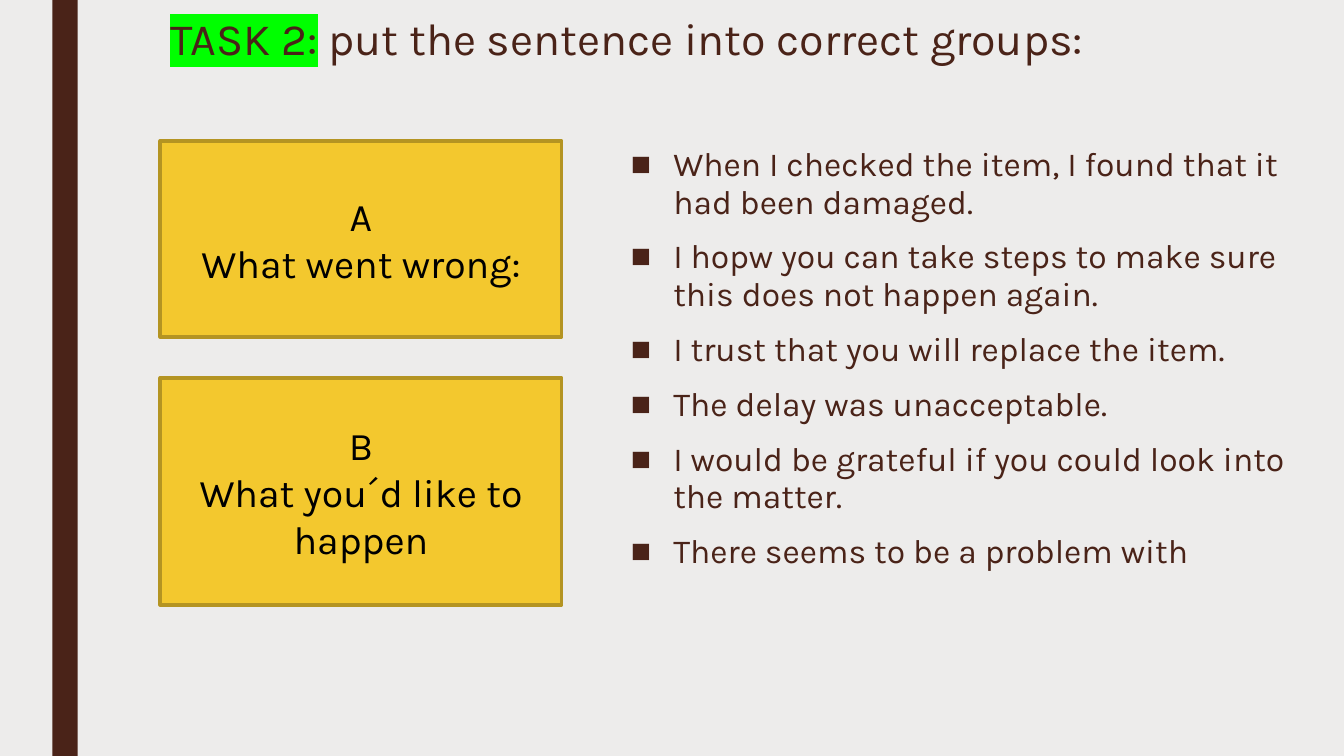
from lxml.etree import SubElement
from pptx import Presentation
from pptx.dml.color import RGBColor
from pptx.enum.shapes import MSO_SHAPE
from pptx.enum.text import MSO_ANCHOR, PP_ALIGN
from pptx.oxml.ns import qn
from pptx.util import Inches, Pt

WIDE, HIGH = 13.33, 7.5
LEFT, TOP = 1.59 / WIDE, 1.4 / HIGH
BOX = 3.98 / WIDE

GROUPS = [
    (TOP, 1.94 / HIGH, ["A", "What went wrong:"]),
    (3.75 / HIGH, 2.25 / HIGH, ["B", "What you´d like to happen"]),
]
LINES = [
    "When I checked the item, I found that it had been damaged.",
    "I hopw you can take steps to make sure this does not happen again.",
    "I trust that you will replace the item.",
    "The delay was unacceptable.",
    "I would be grateful if you could look into the matter.",
    "There seems to be a problem with",
]


def tint(code):
    return RGBColor.from_string(code)


def write(para, text, size=24, color="4A2318", mark=None):
    """Add a run; mark is its highlight colour."""
    run = para.add_run()
    run.text = text
    font = run.font
    font.size, font.name = Pt(size), "Karla"
    font.color.rgb = tint(color)
    if mark:
        props = font._element
        light = SubElement(props, qn("a:highlight"))
        SubElement(light, qn("a:srgbClr"), val=mark)
        props.find(qn("a:solidFill")).addnext(light)


class Deck:
    """Places elements by shares of the slide's width and height."""

    dark, gold, edge = "4A2318", "F3C82E", "B49422"

    def __init__(self):
        self.show = Presentation()
        self.show.slide_width = Inches(WIDE)
        self.show.slide_height = Inches(HIGH)
        self.slide = self.show.slides.add_slide(self.show.slide_layouts[6])
        back = self.slide.background.fill
        back.solid()
        back.fore_color.rgb = tint("EDECEB")

    def place(self, x, y, w, h):
        return (Inches(x * WIDE), Inches(y * HIGH),
                Inches(w * WIDE), Inches(h * HIGH))

    def rect(self, x, y, w, h, fill, edge=None):
        shape = self.slide.shapes.add_shape(
            MSO_SHAPE.RECTANGLE, *self.place(x, y, w, h))
        shape.shadow.inherit = False
        shape.fill.solid()
        shape.fill.fore_color.rgb = tint(fill)
        if edge:
            shape.line.color.rgb = tint(edge)
            shape.line.width = Pt(2.75)
        else:
            shape.line.fill.background()
        return shape

    def paras(self, frame, count):
        """Yield count paragraphs of a wrapped frame."""
        frame.word_wrap = True
        for i in range(count):
            yield frame.add_paragraph() if i else frame.paragraphs[0]

    def text(self, x, y, w, h):
        return self.slide.shapes.add_textbox(
            *self.place(x, y, w, h)).text_frame

    def title(self, head, rest):
        frame = self.text(LEFT, 0.12 / HIGH, 10.5 / WIDE, 0.97 / HIGH)
        for para in self.paras(frame, 1):
            para.line_spacing = 0.89
            write(para, head, size=32, mark="00FF00")
            write(para, rest, size=32)

    def group(self, y, h, words):
        frame = self.rect(LEFT, y, BOX, h, self.gold, self.edge).text_frame
        frame.vertical_anchor = MSO_ANCHOR.MIDDLE
        for para, word in zip(self.paras(frame, len(words)), words):
            para.alignment = PP_ALIGN.CENTER
            write(para, word, size=28, color="000000")

    def bullets(self, x, y, w, h, lines):
        frame = self.text(x, y, w, h)
        for para, line in zip(self.paras(frame, len(lines)), lines):
            para.line_spacing = 0.94
            para.space_before, para.space_after = Pt(10), Pt(2)
            write(para, line)
            props = para._p.get_or_add_pPr()
            props.set("marL", str(Inches(0.42)))
            props.set("indent", str(-Inches(0.42)))
            SubElement(props, qn("a:buFont"), typeface="Arial")
            SubElement(props, qn("a:buChar"), char="■")


def main():
    deck = Deck()
    deck.rect(0.52 / WIDE, 0, 0.25 / WIDE, 1, deck.dark)
    deck.title("TASK 2:", " put the sentence into correct groups:")
    deck.bullets(6.16 / WIDE, TOP, 6.9 / WIDE, 5.43 / HIGH, LINES)
    for y, h, words in GROUPS:
        deck.group(y, h, words)
    deck.show.save("out.pptx")


if __name__ == "__main__":
    main()
